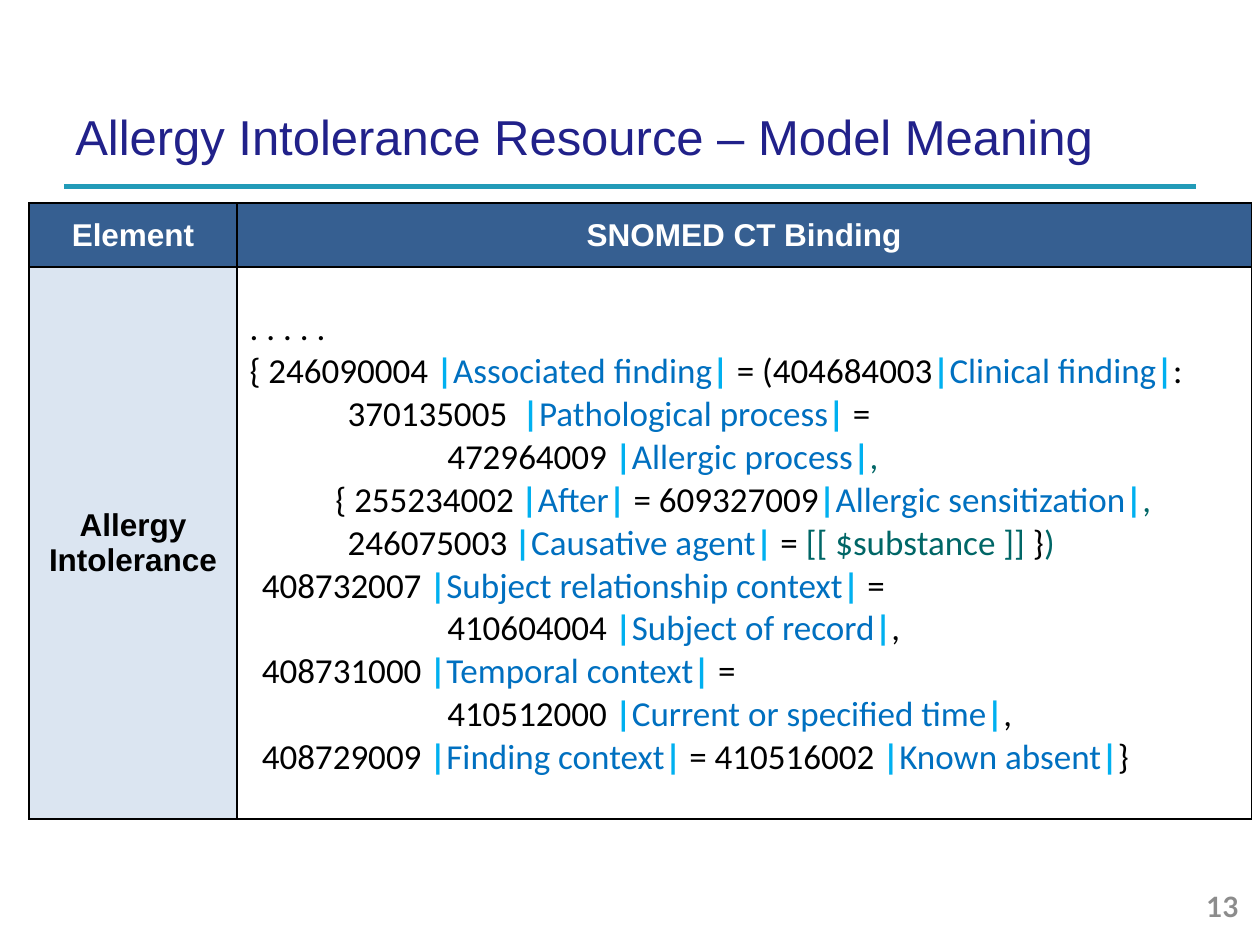
"""Build the slide on the model meaning of the Allergy Intolerance resource."""
from lxml.etree import SubElement
from pptx import Presentation
from pptx.dml.color import RGBColor
from pptx.enum.shapes import MSO_CONNECTOR
from pptx.enum.text import MSO_ANCHOR as Anchor, PP_ALIGN as Align
from pptx.oxml import parse_xml
from pptx.oxml.ns import nsdecls, qn
from pptx.util import Pt

BLACK = RGBColor(0x00, 0x00, 0x00)
WHITE = RGBColor(0xFF, 0xFF, 0xFF)
NAVY = RGBColor(0x21, 0x21, 0x8A)
RULE_TEAL = RGBColor(0x22, 0x9B, 0xB8)
HEADER_BLUE = RGBColor(0x36, 0x5F, 0x91)
PALE_BLUE = RGBColor(0xDB, 0xE5, 0xF1)
GREY = RGBColor(0x8C, 0x8C, 0x8C)
DARK_GREY = RGBColor(0x33, 0x33, 0x33)
BAR_BLUE = RGBColor(0x00, 0xB0, 0xF0)
TERM_BLUE = RGBColor(0x00, 0x70, 0xC0)
SLOT_TEAL = RGBColor(0x00, 0x66, 0x66)

STYLES = {
    "title": ("Arial", 28, NAVY, False),
    "number": ("Lato", 16, GREY, True),
    "header": ("Arial", 18, WHITE, True),
    "element": ("Arial", 18, BLACK, True),
    "code": ("Calibri", 20, BLACK, False),
    "bar": ("Calibri", 20, BAR_BLUE, True),
    "term": ("Calibri", 20, TERM_BLUE, False),
    "slot": ("Calibri", 20, SLOT_TEAL, False),
    "gap": ("Arial", 14, DARK_GREY, False),
}

TITLE = "Allergy Intolerance Resource – Model Meaning"
PAGE_NUMBER = "13"
HEADERS = ["Element", "SNOMED CT Binding"]
ELEMENT = "Allergy Intolerance"

CONTEXT, GROUP, ATTRIBUTE, VALUE = 7, 49, 56, 113
BINDING = [
    (0, [("code", ". . . . .")]),
    (0, [("code", "{ 246090004 "), ("term", "Associated finding"), ("code", " = (404684003"),
         ("term", "Clinical finding"), ("code", ":")]),
    (ATTRIBUTE, [("code", "370135005"), ("gap", " "), ("code", " "),
                 ("term", "Pathological process"), ("code", " = ")]),
    (VALUE, [("code", "472964009 "), ("term", "Allergic process"), ("slot", ",")]),
    (GROUP, [("code", "{ 255234002"), ("gap", " "), ("term", "After"), ("code", " = 609327009"),
             ("term", "Allergic sensitization"), ("slot", ",")]),
    (ATTRIBUTE, [("code", "246075003"), ("gap", " "), ("term", "Causative agent"), ("code", " = "),
                 ("slot", "[[ $substance ]]"), ("code", " }"), ("slot", ")")]),
    (CONTEXT, [("code", "408732007 "), ("term", "Subject relationship context"), ("code", " = ")]),
    (VALUE, [("code", "410604004 "), ("term", "Subject of record"), ("code", ",")]),
    (CONTEXT, [("code", "408731000 "), ("term", "Temporal context"), ("code", " = ")]),
    (VALUE, [("code", "410512000 "), ("term", "Current or specified time"), ("code", ",")]),
    (CONTEXT, [("code", "408729009 "), ("term", "Finding context"), ("code", " = 410516002 "),
               ("term", "Known absent"), ("code", "}")]),
]

COLUMN_WIDTHS = [118.8, 579.6]
ROW_HEIGHTS = [36.72, 315.36]


def add_span(para, style, text):
    span = para.add_run()
    span.text = text
    font = span.font
    font.name, size, font.color.rgb, font.bold = STYLES[style]
    font.size = Pt(size)


def add_text(page, place, style, text, anchor, align):
    frame = page.shapes.add_textbox(*map(Pt, place)).text_frame
    frame.word_wrap = True
    frame.vertical_anchor = anchor
    para = frame.paragraphs[0]
    para.alignment = align
    add_span(para, style, text)
    return frame


def add_rule(page):
    rule = page.shapes.add_connector(MSO_CONNECTOR.STRAIGHT, Pt(36.7), Pt(106.5), Pt(683.3), Pt(106.5))
    rule.line.color.rgb = RULE_TEAL
    rule.line.width = Pt(3)
    SubElement(rule.element.spPr, qn("a:effectLst"))


def style_cell(cell, fill):
    properties = cell._tc.get_or_add_tcPr()
    for side in "LRTB":
        properties.append(parse_xml(
            f'<a:ln{side} {nsdecls("a")} w="{Pt(1)}"><a:solidFill>'
            f'<a:srgbClr val="{BLACK}"/></a:solidFill></a:ln{side}>'))
    cell.fill.solid()
    cell.fill.fore_color.rgb = fill
    cell.vertical_anchor = Anchor.MIDDLE


def fill_label(cell, style, text, fill):
    style_cell(cell, fill)
    para = cell.text_frame.paragraphs[0]
    para.alignment = Align.CENTER
    para.space_before = para.space_after = Pt(2)
    add_span(para, style, text)


def fill_binding(cell):
    style_cell(cell, WHITE)
    frame = cell.text_frame
    for index, (indent, pieces) in enumerate(BINDING):
        para = frame.add_paragraph() if index else frame.paragraphs[0]
        para.alignment = Align.JUSTIFY
        para._p.get_or_add_pPr().set("marL", str(Pt(indent)))
        for style, text in pieces:
            if style == "term":
                add_span(para, "bar", "|")
            add_span(para, style, text)
            if style == "term":
                add_span(para, "bar", "|")


def add_binding_table(page):
    size = sum(COLUMN_WIDTHS), sum(ROW_HEIGHTS)
    table = page.shapes.add_table(2, 2, Pt(16.6), Pt(116), *map(Pt, size)).table
    for column, width in zip(table.columns, COLUMN_WIDTHS):
        column.width = Pt(width)
    for row, height in zip(table.rows, ROW_HEIGHTS):
        row.height = Pt(height)
    for index, text in enumerate(HEADERS):
        fill_label(table.cell(0, index), "header", text, HEADER_BLUE)
    fill_label(table.cell(1, 0), "element", ELEMENT, PALE_BLUE)
    fill_binding(table.cell(1, 1))


def main():
    deck = Presentation()
    deck.slide_width, deck.slide_height = Pt(720), Pt(540)
    page = deck.slides.add_slide(deck.slide_layouts[6])
    add_rule(page)
    title = add_text(page, (36, 58.3, 648, 43.2), "title", TITLE, Anchor.BOTTOM, Align.LEFT)
    title.margin_left = title.margin_right = title.margin_top = title.margin_bottom = Pt(7.2)
    add_text(page, (674, 506.2, 41, 23), "number", PAGE_NUMBER, Anchor.MIDDLE, Align.RIGHT)
    add_binding_table(page)
    deck.save("out.pptx")


if __name__ == "__main__":
    main()
